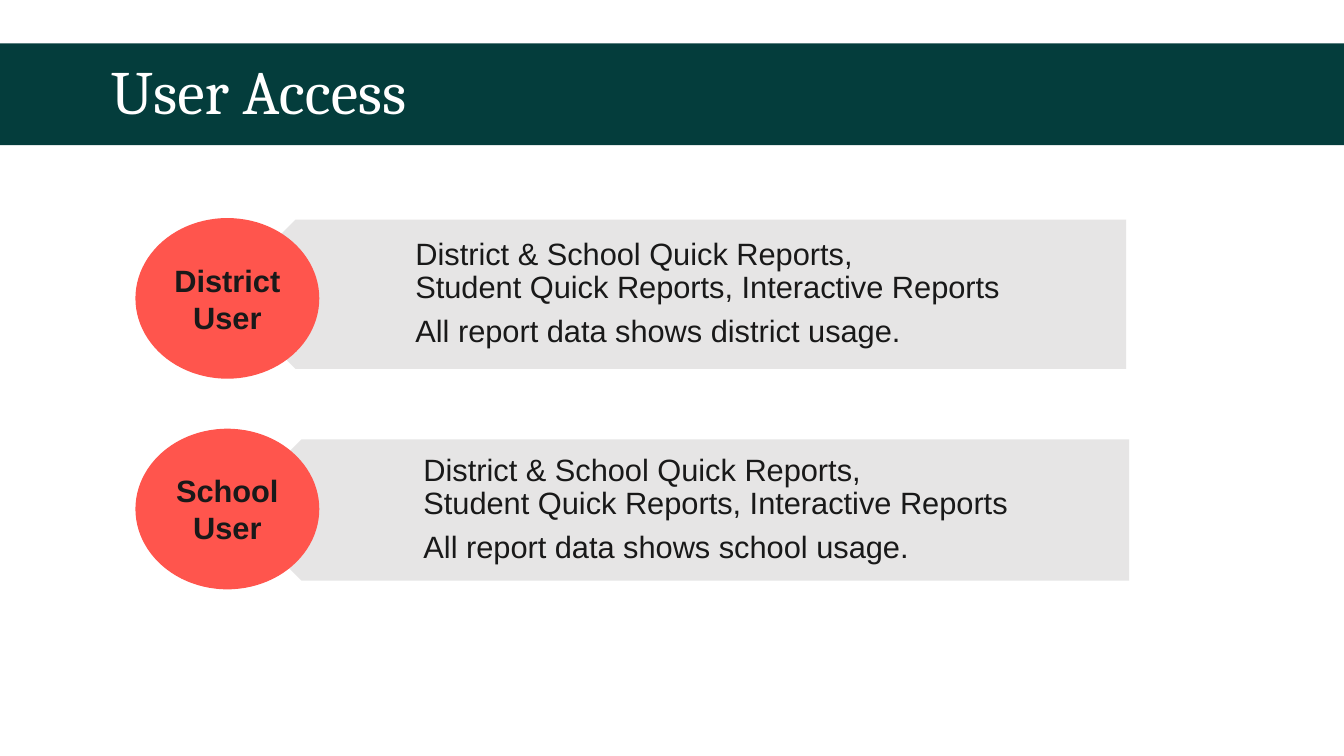
"""Build the User Access slide."""
import pptx
import pptx.util
import pptx.dml.color
import pptx.enum.shapes
import pptx.enum.text
from dataclasses import dataclass

TITLE = "User Access"
REPORTS = "District & School Quick Reports,\vStudent Quick Reports, Interactive Reports"
USERS = [
    {"name": "District User", "usage": "All report data shows district usage.",
     "disc": 2.17, "plate": (2.19, 2.18, 8.98, 1.48), "inset": 0.37},
    {"name": "School User", "usage": "All report data shows school usage.",
     "disc": 4.26, "plate": (2.29, 4.36, 8.91, 1.4), "inset": 0.35},
]


@dataclass(frozen=True)
class Theme:
    band: str = "043D3C"
    disc: str = "FF554D"
    plate: str = "E6E5E5"
    ink: str = "191919"
    light: str = "FFFFFF"
    head: str = "Cambria"
    body: str = "Arial"
    big: float = 44
    text: float = 22
    gap: float = 7.7


LOOK = Theme()
Inches = pptx.util.Inches
Pt = pptx.util.Pt
Kind = pptx.enum.shapes.MSO_SHAPE
Align = pptx.enum.text.PP_ALIGN


def tint(code):
    return pptx.dml.color.RGBColor.from_string(code)


def place(box):
    return [Inches(n) for n in box]


def paint(shape, fill):
    shape.fill.solid()
    shape.fill.fore_color.rgb = tint(fill)


def write(shape, text, face, size, color, bold=False, align=Align.LEFT, lead=1.0, gap=0):
    frame = shape.text_frame
    frame.text = text
    frame.word_wrap = True
    frame.auto_size = pptx.enum.text.MSO_AUTO_SIZE.NONE
    frame.vertical_anchor = pptx.enum.text.MSO_ANCHOR.MIDDLE
    for para in frame.paragraphs:
        para.alignment = align
        para.line_spacing = lead
        para.space_before = Pt(0)
        para.space_after = Pt(gap)
        for run in para.runs:
            run.font.name = face
            run.font.size = Pt(size)
            run.font.bold = bold
            run.font.color.rgb = tint(color)
    return frame


def add_shape(slide, kind, box, fill):
    shape = slide.shapes.add_shape(kind, *place(box))
    shape.shadow.inherit = False
    paint(shape, fill)
    shape.line.fill.background()
    return shape


def add_plate(slide, user):
    left, top, width, height = user["plate"]
    plate = add_shape(slide, Kind.PENTAGON, user["plate"], LOOK.plate)
    plate.rotation = 180
    inset = user["inset"]
    note = slide.shapes.add_textbox(*place((left + inset, top, width - inset, height)))
    frame = write(note, REPORTS + "\n" + user["usage"], LOOK.body, LOOK.text,
                  LOOK.ink, lead=0.9, gap=LOOK.gap)
    frame.margin_left, frame.margin_right = Inches(1.56), Inches(0.17)
    frame.margin_top = frame.margin_bottom = Inches(0.09)


def add_disc(slide, user):
    disc = add_shape(slide, Kind.OVAL, (1.35, user["disc"], 1.81, 1.58), LOOK.disc)
    disc.line.color.rgb = tint(LOOK.disc)
    disc.line.width = Pt(1)
    write(disc, user["name"], LOOK.body, LOOK.text, LOOK.ink, True, Align.CENTER)


def main():
    deck = pptx.Presentation()
    deck.slide_width, deck.slide_height = Inches(13.33), Inches(7.5)
    slide = deck.slides.add_slide(deck.slide_layouts[5])
    title = slide.shapes.title
    title.left, title.top, title.width, title.height = place((0, 0.43, 13.33, 1.01))
    paint(title, LOOK.band)
    frame = write(title, TITLE, LOOK.head, LOOK.big, LOOK.light, lead=0.9)
    frame.margin_left = Inches(1.1)
    for user in USERS:
        add_plate(slide, user)
    for user in USERS:
        add_disc(slide, user)
    deck.save("out.pptx")


if __name__ == "__main__":
    main()
